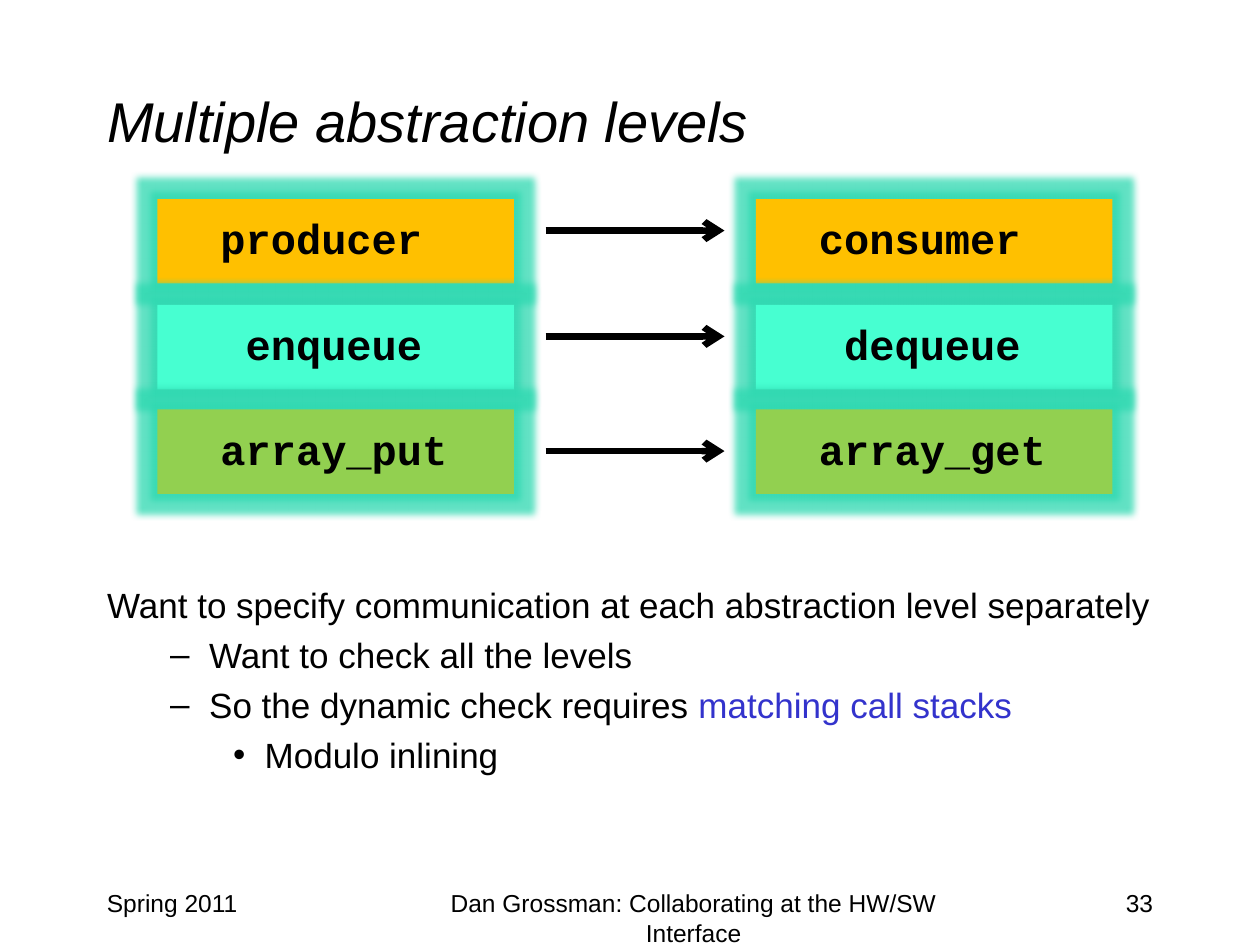
from lxml import etree
from pptx import Presentation
from pptx.dml.color import RGBColor
from pptx.enum.shapes import MSO_CONNECTOR, MSO_SHAPE
from pptx.enum.text import MSO_ANCHOR, MSO_AUTO_SIZE, PP_ALIGN
from pptx.oxml.ns import qn
from pptx.util import Inches, Pt

LEFT, CENTER, RIGHT = PP_ALIGN.LEFT, PP_ALIGN.CENTER, PP_ALIGN.RIGHT
TOP, MIDDLE = MSO_ANCHOR.TOP, MSO_ANCHOR.MIDDLE
RECTANGLE = MSO_SHAPE.RECTANGLE
STRAIGHT = MSO_CONNECTOR.STRAIGHT
NO_AUTOFIT = MSO_AUTO_SIZE.NONE

COLORS = {
    "text": "000000",
    "emphasis": "3333CC",
    "client": "FFC000",
    "queue": "47FFD1",
    "array": "92D050",
    "glow": "2ED9B1",
}

# top of the boxes, height of the arrow, colour, sender, receiver, text indent
LEVELS = [
    (1.58, 1.83, "client", "producer", "consumer", 0.4),
    (2.42, 2.67, "queue", "enqueue", "dequeue", 0.6),
    (3.25, 3.58, "array", "array_put", "array_get", 0.4),
]
SENDER_LEFT, RECEIVER_LEFT = 1.25, 6
ARROW_START, ARROW_END = 4.33, 5.75

# level, bullet, left margin, hanging indent, runs as (text, colour)
POINTS = [
    (0, None, 0, 0,
     [("Want to specify communication at each abstraction level separately", "text")]),
    (1, "–", 0.81, 0.31, [("Want to check all the levels", "text")]),
    (1, "–", 0.81, 0.31,
     [("So the dynamic check requires ", "text"), ("matching call stacks", "emphasis")]),
    (2, "•", 1.25, 0.25, [("Modulo inlining", "text")]),
]

FOOTERS = [
    (0.75, 2.08, "Spring 2011", LEFT),
    (3.17, 4.67, "Dan Grossman: Collaborating at the HW/SW Interface", CENTER),
    (7.17, 2.08, "33", RIGHT),
]


def rgb(name):
    return RGBColor.from_string(COLORS[name])


def set_font(font, size, name="Arial", color="text"):
    font.name = name
    font.size = Pt(size)
    font.color.rgb = rgb(color)


def place(shape, left, top, width, height):
    shape.left, shape.top = Inches(left), Inches(top)
    shape.width, shape.height = Inches(width), Inches(height)


def set_bullet(paragraph, character, margin, hanging):
    properties = paragraph._p.get_or_add_pPr()
    properties.set("marL", str(Inches(margin)))
    properties.set("indent", str(-Inches(hanging)))
    if character:
        etree.SubElement(properties, qn("a:buChar")).set("char", character)
    else:
        etree.SubElement(properties, qn("a:buNone"))


def add_glow(shape, radius, opacity):
    """Put a soft coloured halo around a shape; opacity is in percent."""
    effects = shape._element.spPr.find(qn("a:effectLst"))
    glow = etree.SubElement(effects, qn("a:glow"), rad=str(Pt(radius)))
    color = etree.SubElement(glow, qn("a:srgbClr"), val=COLORS["glow"])
    etree.SubElement(color, qn("a:alpha"), val=str(opacity * 1000))


def fill_title(title):
    place(title, 0.75, 0.33, 8.5, 1.25)
    frame = title.text_frame
    frame.text = "Multiple abstraction levels"
    frame.auto_size = NO_AUTOFIT
    frame.vertical_anchor = MIDDLE
    paragraph = frame.paragraphs[0]
    paragraph.alignment = LEFT
    set_font(paragraph.font, 32)
    paragraph.font.italic = True


def fill_body(body):
    place(body, 0.75, 4.58, 8.5, 2.25)
    frame = body.text_frame
    frame.auto_size = NO_AUTOFIT
    for index, (level, bullet, margin, hanging, runs) in enumerate(POINTS):
        paragraph = frame.add_paragraph() if index else frame.paragraphs[0]
        paragraph.level = level
        paragraph.space_before = Pt(4.6)
        set_bullet(paragraph, bullet, margin, hanging)
        for text, color in runs:
            run = paragraph.add_run()
            run.text = text
            set_font(run.font, 20, color=color)


def add_box(slide, left, top, color, text, indent):
    box = slide.shapes.add_shape(
        RECTANGLE, Inches(left), Inches(top), Inches(2.83), Inches(0.67))
    box.shadow.inherit = False
    box.fill.solid()
    box.fill.fore_color.rgb = rgb(color)
    box.line.fill.background()
    add_glow(box, 8, 75)
    frame = box.text_frame
    frame.text = text
    frame.vertical_anchor = TOP
    frame.margin_left = Inches(0.1 + indent)
    frame.margin_top = Inches(0.11)
    paragraph = frame.paragraphs[0]
    paragraph.alignment = LEFT
    set_font(paragraph.font, 24, "Courier New")
    paragraph.font.bold = True


def add_arrow(slide, height):
    arrow = slide.shapes.add_connector(
        STRAIGHT, Inches(ARROW_START), Inches(height), Inches(ARROW_END), Inches(height))
    arrow.line.color.rgb = rgb("text")
    arrow.line.width = Pt(3.75)
    etree.SubElement(arrow.line._get_or_add_ln(), qn("a:tailEnd"), type="arrow")
    etree.SubElement(arrow._element.spPr, qn("a:effectLst"))


def add_footer(slide, left, width, text, alignment):
    box = slide.shapes.add_textbox(Inches(left), Inches(7), Inches(width), Inches(0.5))
    frame = box.text_frame
    frame.word_wrap = True
    frame.text = text
    paragraph = frame.paragraphs[0]
    paragraph.alignment = alignment
    set_font(paragraph.font, 14)


def main():
    presentation = Presentation()
    presentation.slide_width = Inches(10)
    presentation.slide_height = Inches(7.5)
    slide = presentation.slides.add_slide(presentation.slide_layouts[1])
    fill_title(slide.shapes.title)
    fill_body(slide.placeholders[1])
    for footer in FOOTERS:
        add_footer(slide, *footer)
    for top, arrow_height, color, sender, receiver, indent in LEVELS:
        add_box(slide, SENDER_LEFT, top, color, sender, indent)
        add_arrow(slide, arrow_height)
        add_box(slide, RECEIVER_LEFT, top, color, receiver, indent)
    presentation.save("out.pptx")


if __name__ == "__main__":
    main()
